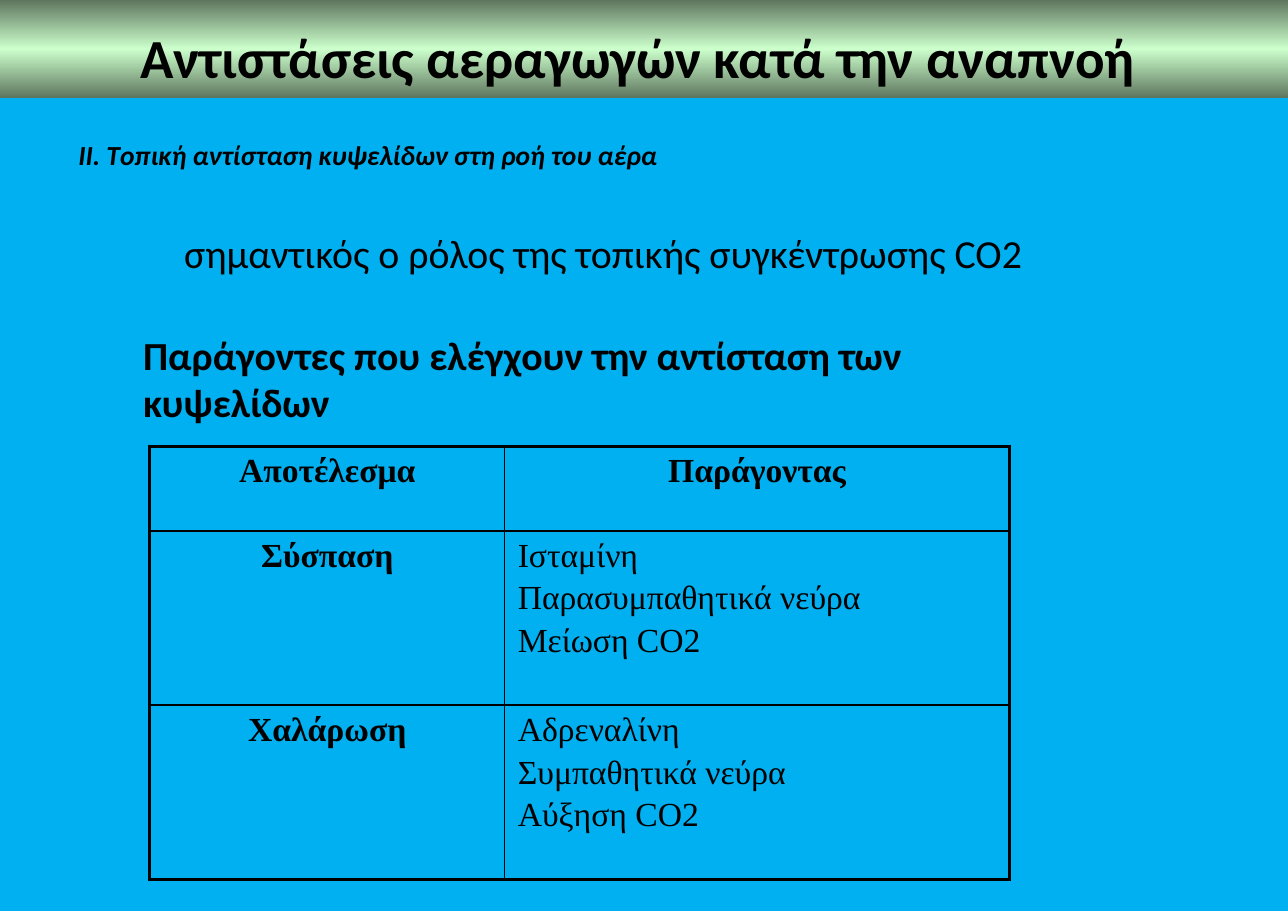
import copy

import pptx
import pptx.dml.color
import pptx.enum.shapes
import pptx.enum.text
import pptx.oxml
import pptx.oxml.ns
import pptx.util

Pt = pptx.util.Pt
CENTER = pptx.enum.text.PP_ALIGN.CENTER
LEFT = pptx.enum.text.PP_ALIGN.LEFT
WIDTH, HEIGHT = 841.68, 595.44


def color(value):
    return pptx.dml.color.RGBColor.from_string(value)


class SlideBuilder:
    ink = "000000"
    heading_font = "Calibri"
    table_font = "Times New Roman"
    outer_line, inner_line = 2.25, 1

    def __init__(self, slide, background):
        self.slide = slide
        slide.background.fill.solid()
        slide.background.fill.fore_color.rgb = color(background)

    def style(self, paragraph, text, size, name, bold=False, italic=False, align=LEFT):
        paragraph.text = text
        paragraph.alignment = align
        font = paragraph.font
        font.size, font.name = Pt(size), name
        font.bold, font.italic = bold, italic
        font.color.rgb = color(self.ink)

    def insets(self, frame, left=9.36, top=4.32, right=9.36, bottom=4.32):
        frame.margin_left, frame.margin_top = Pt(left), Pt(top)
        frame.margin_right, frame.margin_bottom = Pt(right), Pt(bottom)
        frame.vertical_anchor = pptx.enum.text.MSO_ANCHOR.TOP

    def title_band(self, text, height, edge, middle):
        band = self.slide.shapes.add_shape(
            pptx.enum.shapes.MSO_SHAPE.RECTANGLE, 0, 0, Pt(WIDTH), Pt(height))
        band.shadow.inherit = False
        band.line.fill.background()
        band.fill.gradient()
        band.fill.gradient_angle = 90
        first, last = band.fill.gradient_stops
        for stop, position in ((first, 0), (last, 1)):
            stop.color.rgb = color(edge)
            stop.position = position
        stops = band.fill._fill._gradFill.gsLst
        stops.insert(1, copy.deepcopy(stops[0]))
        center = band.fill.gradient_stops[1]
        center.color.rgb = color(middle)
        center.position = 0.5
        frame = band.text_frame
        frame.word_wrap = True
        self.insets(frame, top=15.3, right=17.4)
        self.style(frame.paragraphs[0], text, 36, self.heading_font, bold=True, align=CENTER)

    def text(self, text, left, top, width, height, size, bold=False, italic=False, wrap=True):
        box = self.slide.shapes.add_textbox(Pt(left), Pt(top), Pt(width), Pt(height))
        frame = box.text_frame
        frame.word_wrap = wrap
        self.insets(frame)
        self.style(frame.paragraphs[0], text, size, self.heading_font, bold, italic)

    def borders(self, cell, outer_sides):
        properties = cell._tc.get_or_add_tcPr()
        for side in "LRTB":
            width = self.outer_line if side in outer_sides else self.inner_line
            properties.append(pptx.oxml.parse_xml(
                f'<a:ln{side} {pptx.oxml.ns.nsdecls("a")} w="{Pt(width)}"><a:solidFill>'
                f'<a:srgbClr val="{self.ink}"/></a:solidFill></a:ln{side}>'))

    def table(self, rows, left, top, widths, heights):
        table = self.slide.shapes.add_table(
            len(rows), len(widths), Pt(left), Pt(top), Pt(sum(widths)), Pt(sum(heights))).table
        table.first_row = table.horz_banding = False
        for column, width in zip(table.columns, widths):
            column.width = Pt(width)
        for row, height in zip(table.rows, heights):
            row.height = Pt(height)
        for row_index, row in enumerate(rows):
            for column_index, lines in enumerate(row):
                cell = table.cell(row_index, column_index)
                edges = {"L": column_index == 0, "R": column_index == len(widths) - 1,
                         "T": row_index == 0, "B": row_index == len(rows) - 1}
                self.borders(cell, [side for side, outer in edges.items() if outer])
                cell.fill.background()
                self.insets(cell, left=8.64, right=8.64)
                label = edges["T"] or edges["L"]
                for line_index, line in enumerate(lines):
                    frame = cell.text_frame
                    paragraph = frame.add_paragraph() if line_index else frame.paragraphs[0]
                    self.style(paragraph, line, 22, self.table_font, bold=label,
                               align=CENTER if label else LEFT)
                    if line_index:
                        paragraph.space_before = Pt(3.5)


def main():
    presentation = pptx.Presentation()
    presentation.slide_width, presentation.slide_height = Pt(WIDTH), Pt(HEIGHT)
    builder = SlideBuilder(
        presentation.slides.add_slide(presentation.slide_layouts[6]), "00B0F0")
    builder.title_band("Αντιστάσεις αεραγωγών κατά την αναπνοή", 64, "5E765E", "CCFFCC")
    builder.text("σημαντικός ο ρόλος της τοπικής συγκέντρωσης CO2",
                 111, 145.4, 645, 41, 26)
    builder.text("Παράγοντες που ελέγχουν την αντίσταση των κυψελίδων",
                 84.2, 211.7, 596, 72, 26, bold=True)
    builder.text("ΙI. Tοπική αντίσταση κυψελίδων στη ροή του αέρα",
                 41.8, 85.7, 401, 31, 18, bold=True, italic=True, wrap=False)
    builder.table(
        [[["Αποτέλεσμα"], ["Παράγοντας"]],
         [["Σύσπαση"], ["Ισταμίνη", "Παρασυμπαθητικά νεύρα", "Μείωση CO2"]],
         [["Χαλάρωση"], ["Αδρεναλίνη", "Συμπαθητικά νεύρα", "Αύξηση CΟ2"]]],
        98, 291.6, [231.8, 329.8], [55.4, 113.8, 113.8])
    presentation.save("out.pptx")


if __name__ == "__main__":
    main()
